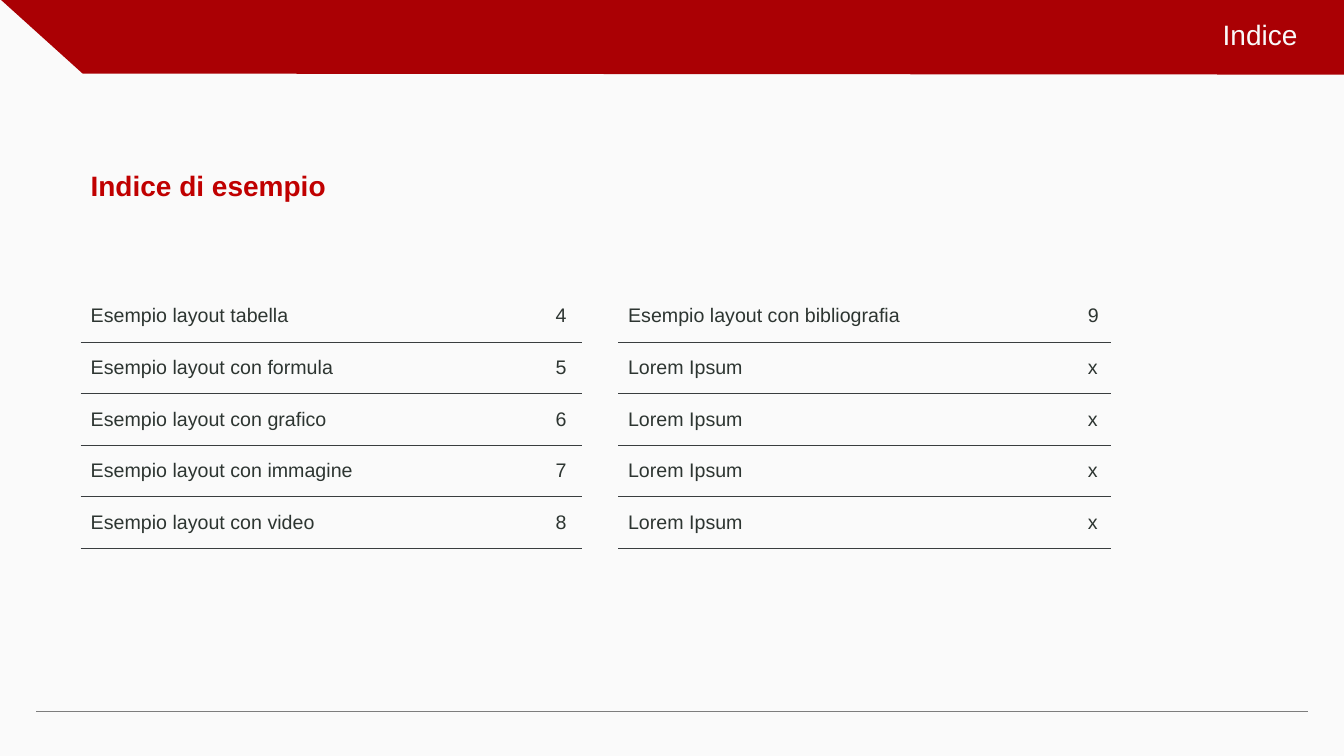
from pptx import Presentation
from pptx import util as u
from pptx.dml.color import RGBColor
from pptx.enum import shapes, text
from pptx.oxml.ns import qn
from lxml import etree

PAPER = RGBColor(0xFA, 0xFA, 0xFA)
BAND_RED = RGBColor(0xAA, 0x00, 0x04)
HEADING_RED = RGBColor(0xC0, 0x00, 0x00)
FOOTER_GREY = RGBColor(0x7D, 0x7D, 0x7D)
RULE_GREY = RGBColor(0x39, 0x3D, 0x3F)
INK = RGBColor(0x2D, 0x35, 0x31)


def write(frame, words, **font_values):
    frame.text = words
    para = frame.paragraphs[0]
    for name, value in {"name": "Arial", **font_values}.items():
        if name == "color":
            para.runs[0].font.color.rgb = value
        else:
            setattr(para.runs[0].font, name, value)
    return para


def add_border(cell, side, ruled):
    line = etree.SubElement(cell._tc.get_or_add_tcPr(), qn(f"a:{side}"), w=str(u.Pt(0.5)))
    if ruled:
        fill = etree.SubElement(line, qn("a:solidFill"))
        etree.SubElement(fill, qn("a:srgbClr"), val=str(RULE_GREY))
    else:
        etree.SubElement(line, qn("a:noFill"))


deck = Presentation()
deck.slide_width = u.Inches(13.33)
deck.slide_height = u.Inches(7.5)
page = deck.slides.add_slide(deck.slide_layouts[5])
page.background.fill.solid()
page.background.fill.fore_color.rgb = PAPER

outline = page.shapes.build_freeform(u.Inches(0), u.Inches(-0.01))
outline.add_line_segments(
    [(u.Inches(x), u.Inches(y)) for x, y in [(13.38, -0.01), (13.38, 0.74), (0.82, 0.73)]]
)
band = outline.convert_to_shape()
band.shadow.inherit = False
band.fill.solid()
band.fill.fore_color.rgb = BAND_RED
band.line.fill.background()

footer_line = page.shapes.add_connector(
    shapes.MSO_CONNECTOR.STRAIGHT, u.Inches(0.36), u.Inches(7.06), u.Inches(12.97), u.Inches(7.06)
)
footer_line.line.color.rgb = FOOTER_GREY
footer_line.line.width = u.Pt(0.75)
etree.SubElement(footer_line.element.spPr, qn("a:effectLst"))

title = page.shapes.title
title.element.addprevious(band.element)
title.element.addprevious(footer_line.element)
title.left, title.top, title.width, title.height = map(u.Inches, (5.12, 0, 7.85, 0.73))
title.text_frame.auto_size = text.MSO_AUTO_SIZE.NONE
title.text_frame.vertical_anchor = text.MSO_ANCHOR.MIDDLE
para = write(title.text_frame, "Indice", size=u.Pt(20), color=PAPER)
para.alignment = text.PP_ALIGN.RIGHT
para.line_spacing = 0.9

heading = page.shapes.add_textbox(u.Inches(0.8), u.Inches(1.56), u.Inches(11.73), u.Inches(0.91))
heading.text_frame.word_wrap = True
para = write(heading.text_frame, "Indice di esempio", size=u.Pt(20), color=HEADING_RED, bold=True)
para.line_spacing = 1.2

entries = [
    ("Esempio layout tabella", "4", "", "Esempio layout con bibliografia", "9"),
    ("Esempio layout con formula", "5", "", "Lorem Ipsum", "x"),
    ("Esempio layout con grafico", "6", "", "Lorem Ipsum", "x"),
    ("Esempio layout con immagine", "7", "", "Lorem Ipsum", "x"),
    ("Esempio layout con video", "8", "", "Lorem Ipsum", "x"),
]
widths = (4.61, 0.36, 0.36, 4.56, 0.33)
table = page.shapes.add_table(
    len(entries), len(widths), u.Inches(0.8), u.Inches(2.88), u.Inches(sum(widths)), u.Inches(2.56)
).table
table.first_row = False
table.horz_banding = False
for column, width in zip(table.columns, widths):
    column.width = u.Inches(width)

for row, entry in enumerate(entries):
    for col, words in enumerate(entry):
        cell = table.cell(row, col)
        cell.vertical_anchor = text.MSO_ANCHOR.MIDDLE
        if words:
            write(cell.text_frame, words, size=u.Pt(14), color=INK)
        ruled = {"lnL": False, "lnR": False, "lnT": words and row > 0, "lnB": words}
        for side, shown in ruled.items():
            add_border(cell, side, shown)
        cell.fill.background()

deck.save("out.pptx")
